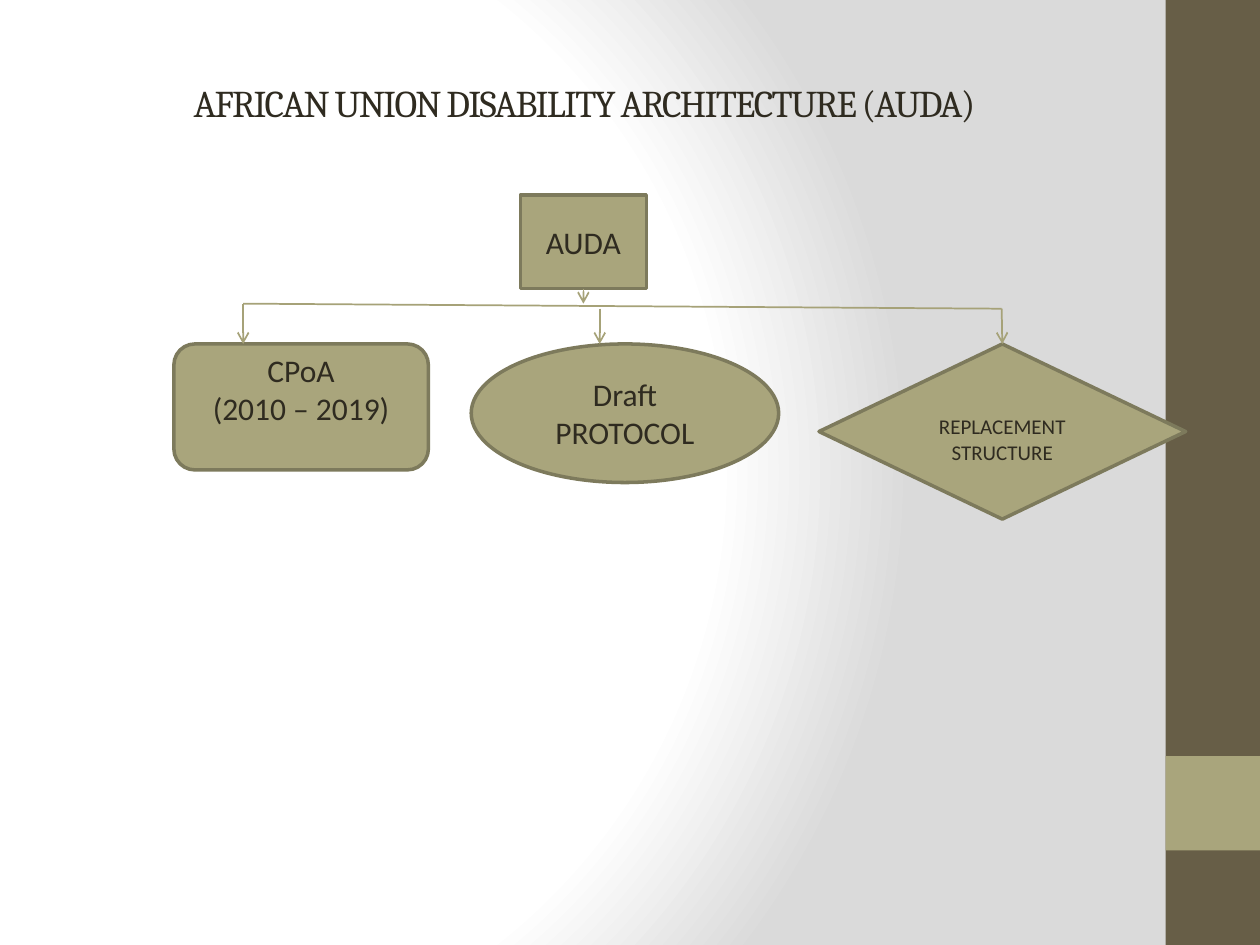
from dataclasses import dataclass

from lxml.etree import SubElement
from pptx import Presentation
from pptx.dml.color import RGBColor
from pptx.enum.shapes import MSO_CONNECTOR, MSO_SHAPE
from pptx.enum.text import MSO_ANCHOR, PP_ALIGN
from pptx.oxml import parse_xml
from pptx.oxml.ns import nsdecls, qn
from pptx.util import Inches, Pt


@dataclass(frozen=True)
class Theme:
    paper: str = "FFFFFF"
    shade: str = "DADADA"
    band: str = "675E47"
    accent: str = "A9A57C"
    outline: str = "7D7A5C"
    connector: str = "A6A278"
    ink: str = "2F2B20"
    title_font: str = "Cambria"
    body_font: str = "Calibri"
    title_size: float = 21.6
    node_size: float = 18
    small_size: float = 12


class SlideBuilder:
    def __init__(self, page, theme):
        self.page = page
        self.theme = theme

    def background(self):
        """Fill the page with a radial gradient centred left of the middle."""
        self.page.background.fill.solid()
        properties = self.page.element.find(".//" + qn("p:bgPr"))
        stops = "".join(
            f'<a:gs pos="{percent * 1000}"><a:srgbClr val="{color}"/></a:gs>'
            for percent, color in ((0, self.theme.paper), (75, self.theme.paper),
                                   (100, self.theme.shade)))
        gradient = parse_xml(
            f'<a:gradFill {nsdecls("a")} rotWithShape="1"><a:gsLst>{stops}</a:gsLst>'
            '<a:path path="circle"><a:fillToRect l="20000" t="50000" r="100000" b="50000"/>'
            '</a:path></a:gradFill>')
        properties.replace(properties.find(qn("a:solidFill")), gradient)

    def shape(self, kind, left, top, width, height, fill):
        box = self.page.shapes.add_shape(
            kind, Inches(left), Inches(top), Inches(width), Inches(height))
        box.shadow.inherit = False
        box.fill.solid()
        box.fill.fore_color.rgb = RGBColor.from_string(fill)
        return box

    def band(self, top, height, fill):
        self.shape(MSO_SHAPE.RECTANGLE, 9.25, top, 0.75, height, fill).line.fill.background()

    def set_text(self, frame, lines, font, size):
        frame.word_wrap = True
        frame.vertical_anchor = MSO_ANCHOR.MIDDLE
        frame.text = "\n".join(lines)
        for para in frame.paragraphs:
            para.alignment = PP_ALIGN.CENTER
            para.font.name = font
            para.font.size = Pt(size)
            para.font.color.rgb = RGBColor.from_string(self.theme.ink)

    def title(self, text):
        box = self.page.shapes.title
        box.left, box.top = Inches(0.5), Inches(0.3)
        box.width, box.height = Inches(8.33), Inches(1.25)
        frame = box.text_frame
        self.set_text(frame, [text], self.theme.title_font, self.theme.title_size)
        frame.margin_bottom = Inches(0.28)
        # Tighten the letter spacing by one point
        for span in frame.paragraphs[0].runs:
            span._r.get_or_add_rPr().set("spc", "-100")

    def node(self, kind, left, top, width, height, lines, size, raise_by=0):
        """Add an outlined node; raise_by lifts its text above the middle."""
        box = self.shape(kind, left, top, width, height, self.theme.accent)
        box.line.color.rgb = RGBColor.from_string(self.theme.outline)
        box.line.width = Pt(2)
        frame = box.text_frame
        self.set_text(frame, lines, self.theme.body_font, size)
        frame.margin_top = Inches(0.05 + max(0, -2 * raise_by))
        frame.margin_bottom = Inches(0.05 + max(0, 2 * raise_by))
        return box

    def connector(self, start, end, arrow=True):
        line = self.page.shapes.add_connector(
            MSO_CONNECTOR.STRAIGHT, *(Inches(value) for value in (*start, *end)))
        line.line.color.rgb = RGBColor.from_string(self.theme.connector)
        line.line.width = Pt(1)
        properties = line._element.spPr
        if arrow:
            SubElement(properties.find(qn("a:ln")), qn("a:tailEnd"), type="arrow")
        SubElement(properties, qn("a:effectLst"))
        return line


def main():
    deck = Presentation()
    deck.slide_width, deck.slide_height = Inches(10), Inches(7.5)
    theme = Theme()
    builder = SlideBuilder(deck.slides.add_slide(deck.slide_layouts[5]), theme)

    # Background, side band and title
    builder.background()
    builder.band(0, 7.5, theme.band)
    builder.band(6, 0.75, theme.accent)
    builder.title("AFRICAN UNION DISABILITY ARCHITECTURE (AUDA) ")

    # Root and its three branches, aligned along their tops
    branch_top = 2.73
    root = builder.node(MSO_SHAPE.RECTANGLE, 4.13, 1.55, 1, 0.74, ["AUDA"], theme.node_size)
    builder.node(MSO_SHAPE.OVAL, 3.74, branch_top, 2.44, 1.1,
                 ["Draft PROTOCOL"], theme.node_size)
    builder.node(MSO_SHAPE.ROUNDED_RECTANGLE, 1.38, branch_top, 2.02, 1,
                 ["CPoA", "(2010 – 2019)"], theme.node_size, raise_by=0.14)
    replacement = builder.node(MSO_SHAPE.DIAMOND, 6.5, branch_top, 2.91, 1.39,
                               ["REPLACEMENT STRUCTURE"], theme.small_size, raise_by=-0.06)

    # Slightly sloping bus line with a drop to each branch
    bus_left, bus_right = (1.93, 2.41), (7.95, 2.45)
    builder.connector(bus_left, bus_right, arrow=False)
    drops = [builder.connector((x, y), (x, branch_top))
             for x, y in (bus_left, (4.76, 2.45), bus_right)]
    drops[-1].end_connect(replacement, 0)
    builder.connector((4.63, 2.29), (4.63, 2.41)).begin_connect(root, 2)

    deck.save("out.pptx")


if __name__ == "__main__":
    main()
